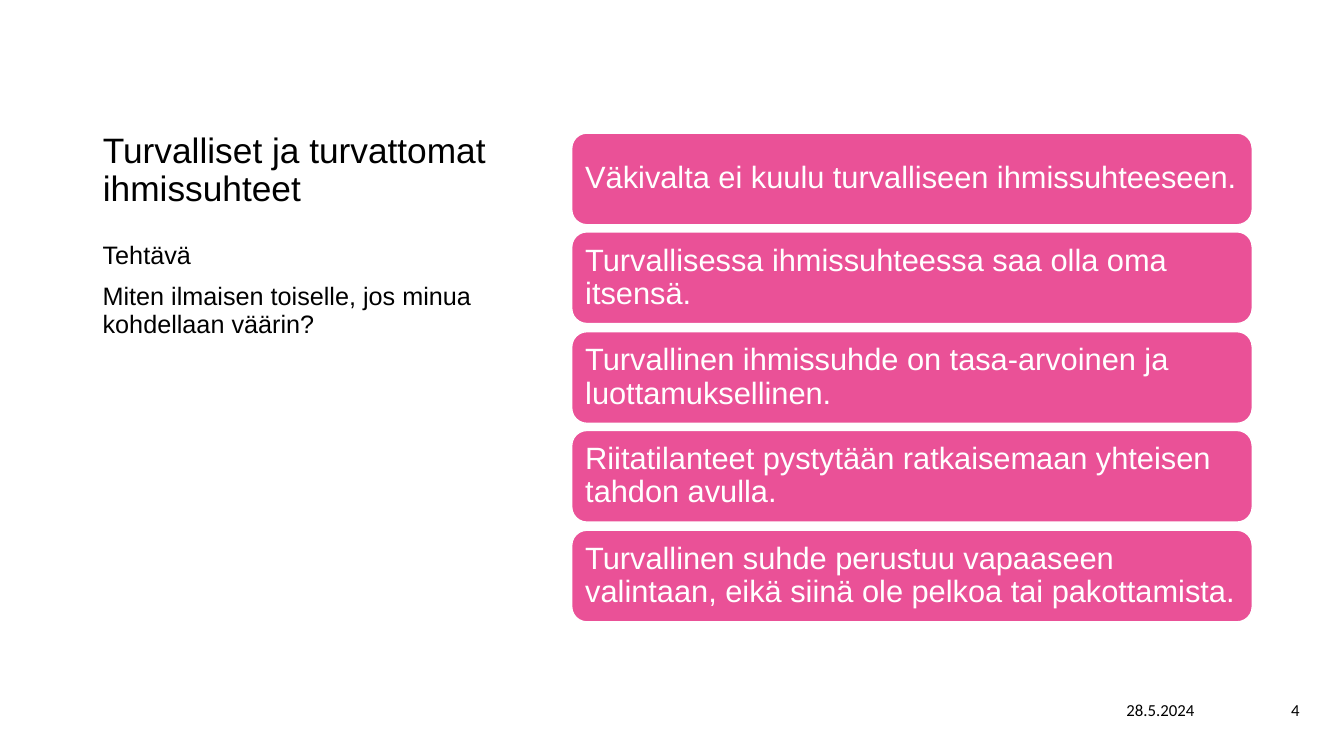
import dataclasses

import pptx
import pptx.dml.color
import pptx.enum.shapes
import pptx.enum.text
import pptx.util

PX = 9144  # EMU: 100 px to the inch
Align = pptx.enum.text.PP_ALIGN
Anchor = pptx.enum.text.MSO_ANCHOR

BLACK, WHITE, PINK = "000000", "FFFFFF", "EA5197"
CARD_LEFT, CARD_TOP, CARD_WIDTH, CARD_HEIGHT = 567, 132, 675, 91
CARD_STEP_TENTHS = 985
CARD_INSET = 9


@dataclasses.dataclass(frozen=True)
class Style:
    size: float
    font: str = "Arial"
    color: str = BLACK
    align: Align = Align.LEFT
    anchor: Anchor = Anchor.TOP
    line_spacing: float = 0.9
    space_before: int = 0


@dataclasses.dataclass(frozen=True)
class Label:
    left: int
    top: int
    width: int
    height: int
    lines: tuple[str, ...]
    style: Style


TITLE = Label(92, 131, 405, 82, ("Turvalliset ja turvattomat ihmissuhteet",),
              Style(25.2, anchor=Anchor.BOTTOM))
FOOTER = Style(12, "Calibri", align=Align.CENTER, anchor=Anchor.MIDDLE, line_spacing=1)
LABELS = (
    Label(92, 236, 430, 406,
          ("Tehtävä", "Miten ilmaisen toiselle, jos minua kohdellaan väärin?"),
          Style(18, space_before=10)),
    Label(1092, 684, 118, 40, ("28.5.2024",), FOOTER),
    Label(1233, 684, 66, 40, ("4",), dataclasses.replace(FOOTER, align=Align.RIGHT)),
)
CARD_STYLE = Style(22, color=WHITE, anchor=Anchor.MIDDLE)
CARDS = (
    "Väkivalta ei kuulu turvalliseen ihmissuhteeseen.",
    "Turvallisessa ihmissuhteessa saa olla oma itsensä.",
    "Turvallinen ihmissuhde on tasa-arvoinen ja luottamuksellinen.",
    "Riitatilanteet pystytään ratkaisemaan yhteisen tahdon avulla.",
    "Turvallinen suhde perustuu vapaaseen valintaan, eikä siinä ole pelkoa tai pakottamista.",
)


def px(length: int) -> pptx.util.Emu:
    return pptx.util.Emu(length * PX)


def rgb(color: str) -> pptx.dml.color.RGBColor:
    return pptx.dml.color.RGBColor.from_string(color)


def write(frame, lines: tuple[str, ...], style: Style) -> None:
    frame.word_wrap = True
    frame.auto_size = pptx.enum.text.MSO_AUTO_SIZE.NONE
    frame.vertical_anchor = style.anchor
    for index, line in enumerate(lines):
        para = frame.add_paragraph() if index else frame.paragraphs[0]
        para.alignment = style.align
        para.line_spacing = style.line_spacing
        para.space_before = pptx.util.Pt(style.space_before if index else 0)
        span = para.add_run()
        span.text = line
        span.font.size = pptx.util.Pt(style.size)
        span.font.name = style.font
        span.font.color.rgb = rgb(style.color)


def place_title(page, label: Label) -> None:
    title = page.shapes.title
    title.left, title.top = px(label.left), px(label.top)
    title.width, title.height = px(label.width), px(label.height)
    write(title.text_frame, label.lines, label.style)


def add_label(page, label: Label) -> None:
    box = page.shapes.add_textbox(px(label.left), px(label.top),
                                  px(label.width), px(label.height))
    write(box.text_frame, label.lines, label.style)


def add_card(page, index: int, text: str) -> None:
    top = CARD_TOP + index * CARD_STEP_TENTHS // 10
    card = page.shapes.add_shape(
        pptx.enum.shapes.MSO_SHAPE.ROUNDED_RECTANGLE,
        px(CARD_LEFT), px(top), px(CARD_WIDTH), px(CARD_HEIGHT))
    card.shadow.inherit = False
    card.fill.solid()
    card.fill.fore_color.rgb = rgb(PINK)
    card.line.color.rgb = rgb(WHITE)
    card.line.width = pptx.util.Pt(1)
    frame = card.text_frame
    frame.margin_left = frame.margin_right = px(CARD_INSET)
    frame.margin_top = frame.margin_bottom = px(CARD_INSET)
    write(frame, (text,), CARD_STYLE)


def main() -> None:
    deck = pptx.Presentation()
    deck.slide_width, deck.slide_height = px(1333), px(750)
    page = deck.slides.add_slide(deck.slide_layouts.get_by_name("Title Only"))
    place_title(page, TITLE)
    for label in LABELS:
        add_label(page, label)
    for index, text in enumerate(CARDS):
        add_card(page, index, text)
    deck.save("out.pptx")


if __name__ == "__main__":
    main()
